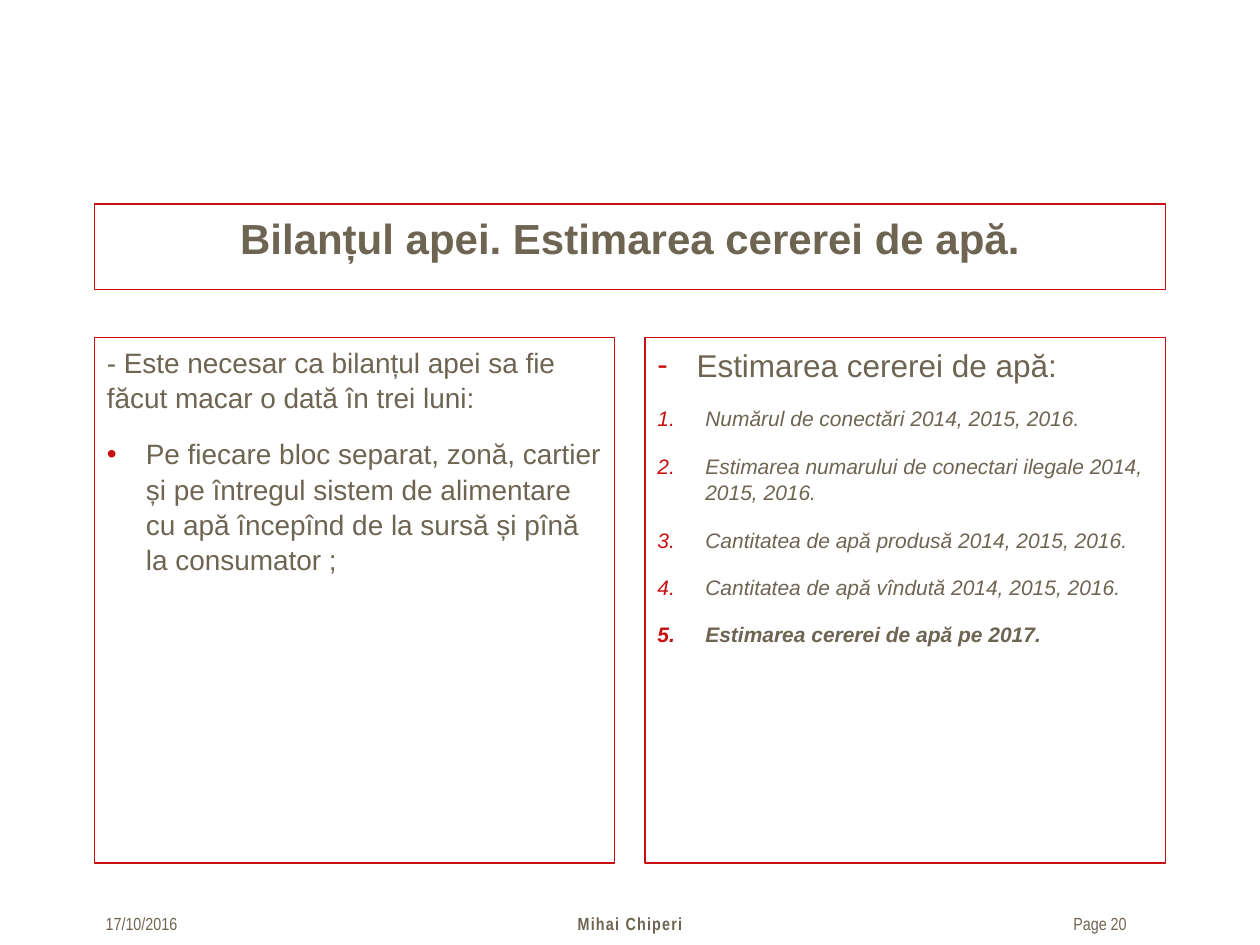
from dataclasses import dataclass

from lxml import etree
from pptx import Presentation
from pptx import util as u
from pptx.dml.color import RGBColor
from pptx.enum import shapes, text
from pptx.oxml.ns import qn


@dataclass(frozen=True)
class Theme:
    ink: str = "6E6452"
    accent: str = "C80F0F"
    body_font: str = "Arial"
    footer_font: str = "Arial Narrow"
    title: int = 24
    heading: int = 18
    body: int = 16
    item: int = 12
    footer: int = 10
    outline: float = 0.75


THEME = Theme()
WIDTH, HEIGHT = 10, 7.5
MARGIN, GUTTER = 0.75, 0.24
CONTENT = WIDTH - 2 * MARGIN
COLUMN = (CONTENT - GUTTER) / 2

DOT = ("buChar", {"char": "•"}, 0.31)
DASH = ("buChar", {"char": "-"}, 0.31)
NUMBER = ("buAutoNum", {"type": "arabicPeriod"}, 0.38)

INTRO = [
    ("- Este necesar ca bilanțul apei sa fie făcut macar o dată în trei luni:",
     None, {"size": u.Pt(THEME.body)}),
    ("Pe fiecare bloc separat, zonă, cartier și pe întregul sistem de "
     "alimentare cu apă începînd de la sursă și pînă la consumator ;",
     DOT, {"size": u.Pt(THEME.body)}),
]
STEPS = [
    "Numărul de conectări 2014, 2015, 2016.",
    "Estimarea numarului de conectari ilegale 2014, 2015, 2016.",
    "Cantitatea de apă produsă 2014, 2015, 2016.",
    "Cantitatea de apă vîndută 2014, 2015, 2016.",
    "Estimarea cererei de apă pe 2017.",
]
DEMAND = [("Estimarea cererei de apă:", DASH, {"size": u.Pt(THEME.heading)})] + [
    (step, NUMBER,
     {"size": u.Pt(THEME.item), "italic": True, "bold": step == STEPS[-1]})
    for step in STEPS
]


def apply(target, values):
    for name, value in values.items():
        setattr(target, name, value)


def add_span(para, wording, font):
    span = para.add_run()
    span.text = wording
    apply(span.font, {"name": THEME.body_font, **font})
    span.font.color.rgb = RGBColor.from_string(THEME.ink)
    return span


def add_bullet(para, bullet):
    """Give the paragraph a hanging indent and an accent-coloured marker."""
    tag, attributes, indent = bullet
    props = para._p.get_or_add_pPr()
    props.set("marL", str(u.Inches(indent)))
    props.set("indent", str(-u.Inches(indent)))
    colour = etree.SubElement(props, qn("a:buClr"))
    etree.SubElement(colour, qn("a:srgbClr"), val=THEME.accent)
    etree.SubElement(props, qn("a:buFont"), typeface=THEME.body_font)
    etree.SubElement(props, qn("a:" + tag), attributes)


def add_panel(page, area):
    """Add an empty outlined rectangle and return its text frame."""
    box = page.shapes.add_shape(
        shapes.MSO_SHAPE.RECTANGLE, *(u.Inches(length) for length in area))
    box.shadow.inherit = False
    box.fill.background()
    box.line.color.rgb = RGBColor.from_string(THEME.accent)
    box.line.width = u.Pt(THEME.outline)
    apply(box.text_frame, {"word_wrap": True,
                           "vertical_anchor": text.MSO_ANCHOR.TOP})
    return box.text_frame


def add_title(page, area):
    para = add_panel(page, area).paragraphs[0]
    apply(para, {"alignment": text.PP_ALIGN.CENTER, "line_spacing": 1.05})
    add_span(para, "Bilanțul apei. Estimarea cererei de apă.",
             {"size": u.Pt(THEME.title), "bold": True})


def add_column(page, area, entries):
    frame = add_panel(page, area)
    for index, (wording, bullet, font) in enumerate(entries):
        para = frame.add_paragraph() if index else frame.paragraphs[0]
        if bullet:
            add_bullet(para, bullet)
        apply(para, {"alignment": text.PP_ALIGN.LEFT, "line_spacing": 1.05,
                     "space_before": u.Pt(4 if index else 0),
                     "space_after": u.Pt(8)})
        add_span(para, wording, font)


def add_footer(page, top, height):
    left, center = text.PP_ALIGN.LEFT, text.PP_ALIGN.CENTER
    parts = [
        ("17/10/2016", 0.74, 1.42, left, False, 0),
        ("Mihai Chiperi", 3.13, 3.74, center, True, 70),
        ("Page 20", 8.42, 1.01, left, False, 0),
    ]
    for wording, x, width, alignment, bold, tracking in parts:
        box = page.shapes.add_textbox(
            *(u.Inches(length) for length in (x, top, width, height)))
        box.text_frame.word_wrap = True
        para = box.text_frame.paragraphs[0]
        para.alignment = alignment
        span = add_span(para, wording, {"name": THEME.footer_font,
                                        "size": u.Pt(THEME.footer),
                                        "bold": bold})
        if tracking:
            span.font._element.set("spc", str(tracking))


def main():
    deck = Presentation()
    apply(deck, {"slide_width": u.Inches(WIDTH),
                 "slide_height": u.Inches(HEIGHT)})
    page = deck.slides.add_slide(deck.slide_layouts[6])
    add_title(page, (MARGIN, 1.62, CONTENT, 0.68))
    for index, entries in enumerate((INTRO, DEMAND)):
        left = MARGIN + index * (COLUMN + GUTTER)
        add_column(page, (left, 2.68, COLUMN, 4.17), entries)
    add_footer(page, 7.2, 0.27)
    deck.save("out.pptx")


if __name__ == "__main__":
    main()
